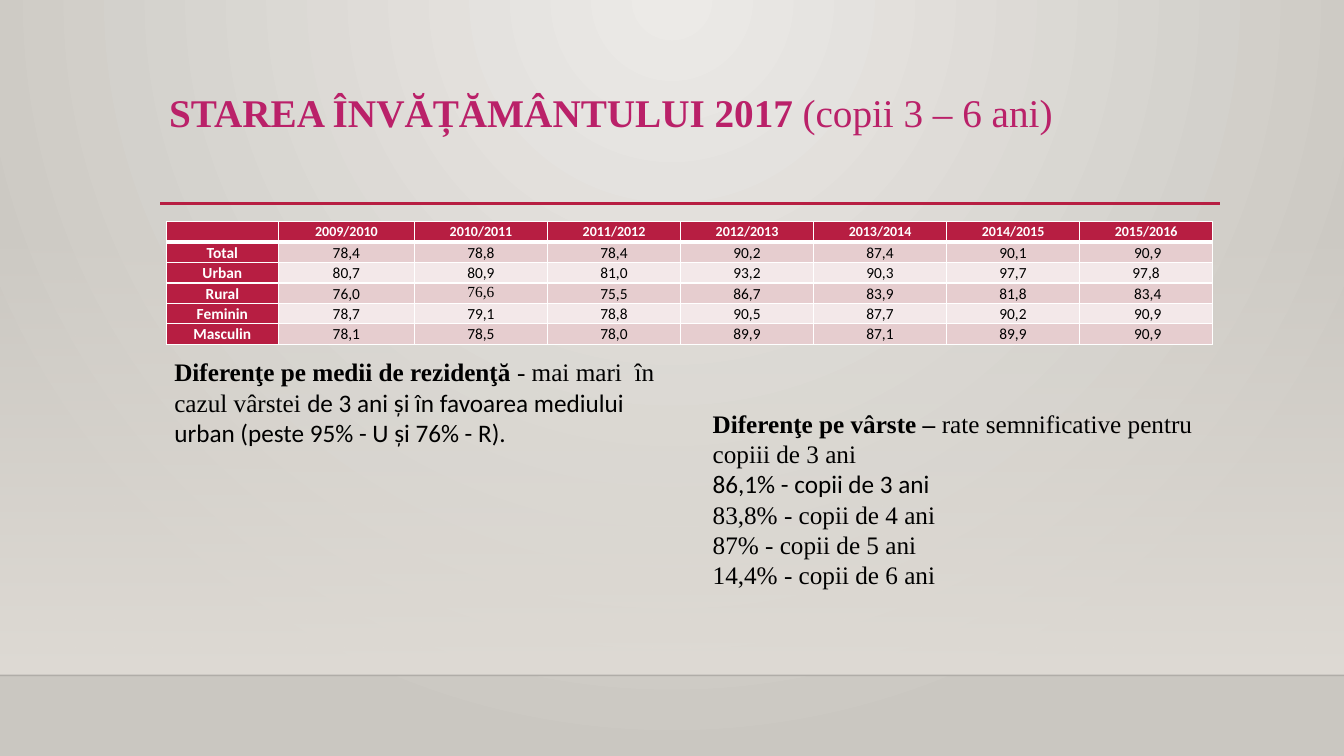
from lxml import etree
from pptx import Presentation
from pptx import util as u
from pptx.dml.color import RGBColor
from pptx.enum import shapes, text
from pptx.oxml.ns import qn

WIDTH, HEIGHT = u.Inches(13.33), u.Inches(7.5)

CRIMSON = RGBColor(0xB7, 0x1E, 0x42)
MAGENTA = RGBColor(0xBA, 0x21, 0x69)
WHITE = RGBColor(0xFF, 0xFF, 0xFF)
BLACK = RGBColor(0, 0, 0)
ROSE = RGBColor(0xE6, 0xCD, 0xCF)
PALE_ROSE = RGBColor(0xF3, 0xE8, 0xE9)
WALL_LIGHT = RGBColor(0xEC, 0xEA, 0xE7)
WALL_DARK = RGBColor(0xCA, 0xC7, 0xC1)
HAZE = RGBColor(0xDF, 0xDB, 0xD5)

SERIF, SANS = "Times New Roman", "Calibri"

YEARS = ["2009/2010", "2010/2011", "2011/2012", "2012/2013",
         "2013/2014", "2014/2015", "2015/2016"]
RATES = [
    ["Total", "78,4", "78,8", "78,4", "90,2", "87,4", "90,1", " 90,9"],
    ["Urban", "80,7", "80,9", "81,0", "93,2", "90,3", "97,7", "97,8"],
    ["Rural", "76,0", "76,6", "75,5", "86,7", "83,9", "81,8", " 83,4"],
    ["Feminin", "78,7", "79,1", "78,8", "90,5", "87,7", "90,2", " 90,9"],
    ["Masculin", "78,1", "78,5", "78,0", "89,9", "87,1", "89,9", " 90,9"],
]
COLUMN_SHARES = [8.33, 10.13] + [9.9] * 6
ROW_SHARE = 2.7


def across(percent):
    return round(WIDTH * percent / 100)


def down(percent):
    return round(HEIGHT * percent / 100)


def area(left, top, width, height):
    """Turn percentages of the slide into a position and size."""
    return across(left), down(top), across(width), down(height)


def add_run(paragraph, words, font, size, color, bold=False):
    run = paragraph.add_run()
    run.text = words
    run.font.name, run.font.size, run.font.bold = font, u.Pt(size), bold
    run.font.color.rgb = color


def add_text(slide, place, paragraphs, size, color, line_spacing=None):
    """Each paragraph is a list of (words, font, bold) runs."""
    frame = slide.shapes.add_textbox(*place).text_frame
    frame.word_wrap = True
    for index, runs in enumerate(paragraphs):
        paragraph = frame.add_paragraph() if index else frame.paragraphs[0]
        paragraph.line_spacing = line_spacing
        for words, font, bold in runs:
            add_run(paragraph, words, font, size, color, bold)


def add_rule(slide, left, right, top, color, weight, alpha=100):
    rule = slide.shapes.add_connector(
        shapes.MSO_CONNECTOR.STRAIGHT,
        across(left), down(top), across(right), down(top))
    rule.line.color.rgb = color
    rule.line.width = u.Pt(weight)
    properties = rule._element.spPr
    etree.SubElement(properties, qn("a:effectLst"))
    set_alpha(next(properties.iter(qn("a:srgbClr"))), alpha)


def set_alpha(color_element, percent):
    if percent < 100:
        etree.SubElement(color_element, qn("a:alpha"), val=str(percent * 1000))


def set_gradient(fill, first, last):
    fill.gradient()
    for stop, color in zip(fill.gradient_stops, (first, last)):
        stop.color.rgb = color


def paint_background(slide):
    """Light glow from the middle of the top edge."""
    set_gradient(slide.background.fill, WALL_LIGHT, WALL_DARK)
    gradient = next(slide._element.iter(qn("a:gradFill")))
    gradient.remove(gradient.find(qn("a:lin")))
    glow = etree.SubElement(gradient, qn("a:path"), path="circle")
    etree.SubElement(glow, qn("a:fillToRect"),
                     l="43000", t="0", r="43000", b="100000")


def add_haze(slide):
    """Veil that fades in towards the floor line."""
    haze = slide.shapes.add_shape(shapes.MSO_SHAPE.RECTANGLE,
                                  *area(0, 29.47, 100, 59.87))
    haze.shadow.inherit = False
    haze.line.fill.background()
    set_gradient(haze.fill, HAZE, HAZE)
    haze.fill.gradient_angle = 270
    set_alpha(next(haze._element.iter(qn("a:srgbClr"))), 0)


def add_borders(cell, bottom):
    properties = cell._tc.get_or_add_tcPr()
    sides = {"a:lnL": 1, "a:lnR": 1, "a:lnT": 1, "a:lnB": bottom}
    for index, (side, weight) in enumerate(sides.items()):
        border = etree.Element(qn(side), w=str(u.Pt(weight)))
        solid = etree.SubElement(border, qn("a:solidFill"))
        etree.SubElement(solid, qn("a:srgbClr"), val=str(WHITE))
        properties.insert(index, border)


def fill_cell(cell, words, size, font, color, bold, background, bottom):
    cell.margin_left = cell.margin_right = u.Inches(0.07)
    cell.margin_top = cell.margin_bottom = 0
    cell.fill.solid()
    cell.fill.fore_color.rgb = background
    add_borders(cell, bottom)
    paragraph = cell.text_frame.paragraphs[0]
    paragraph.alignment = text.PP_ALIGN.CENTER
    paragraph.line_spacing = 1.07
    if words:
        add_run(paragraph, words, font, size, color, bold)
    else:
        etree.SubElement(paragraph._p, qn("a:endParaRPr"), sz=str(size * 100))


def add_rates(slide):
    rows = [[""] + YEARS] + RATES
    table = slide.shapes.add_table(
        len(rows), len(COLUMN_SHARES),
        *area(12.38, 29.33, sum(COLUMN_SHARES), ROW_SHARE * len(rows))).table
    for column, share in zip(table.columns, COLUMN_SHARES):
        column.width = across(share)
    for r, row in enumerate(rows):
        table.rows[r].height = down(ROW_SHARE)
        for c, words in enumerate(row):
            heading = r == 0 or c == 0
            band = ROSE if r % 2 else PALE_ROSE
            fill_cell(table.cell(r, c), words,
                      size=11 if r else 10,
                      font=SERIF if words == "76,6" else SANS,
                      color=WHITE if heading else BLACK,
                      bold=heading,
                      background=CRIMSON if heading else band,
                      bottom=1 if r else 3)


def main():
    deck = Presentation()
    deck.slide_width, deck.slide_height = WIDTH, HEIGHT
    slide = deck.slides.add_slide(deck.slide_layouts[6])

    paint_background(slide)
    add_haze(slide)
    add_rule(slide, 0, 100, 89.33, BLACK, 1, alpha=20)
    add_rule(slide, 11.93, 90.77, 26.93, CRIMSON, 2.5)

    add_text(slide, area(11.85, 11.73, 78.77, 15.47), [
        [("STAREA ÎNVĂȚĂMÂNTULUI 2017 ", SERIF, True),
         ("(copii 3 – 6 ani)", SERIF, False)],
    ], 28, MAGENTA, line_spacing=0.9)
    add_rates(slide)
    add_text(slide, area(12.23, 46.53, 37.66, 13.47), [
        [("Diferenţe pe medii de rezidenţă ", SERIF, True),
         ("- mai mari  în cazul vârstei ", SERIF, False),
         ("de 3 ani și în favoarea mediului urban (peste 95% - U și 76% - R).",
          SANS, False)],
    ], 18, BLACK)
    add_text(slide, area(52.29, 53.33, 37.66, 25.6), [
        [("Diferenţe pe vârste – ", SERIF, True),
         ("rate semnificative pentru copiii de 3 ani", SERIF, False)],
        [("86,1% - copii de 3 ani", SANS, False)],
        [("83,8% - copii de 4 ani", SERIF, False)],
        [("87% - copii de 5 ani", SERIF, False)],
        [("14,4% - copii de 6 ani", SERIF, False)],
    ], 18, BLACK)

    deck.save("out.pptx")


if __name__ == "__main__":
    main()
